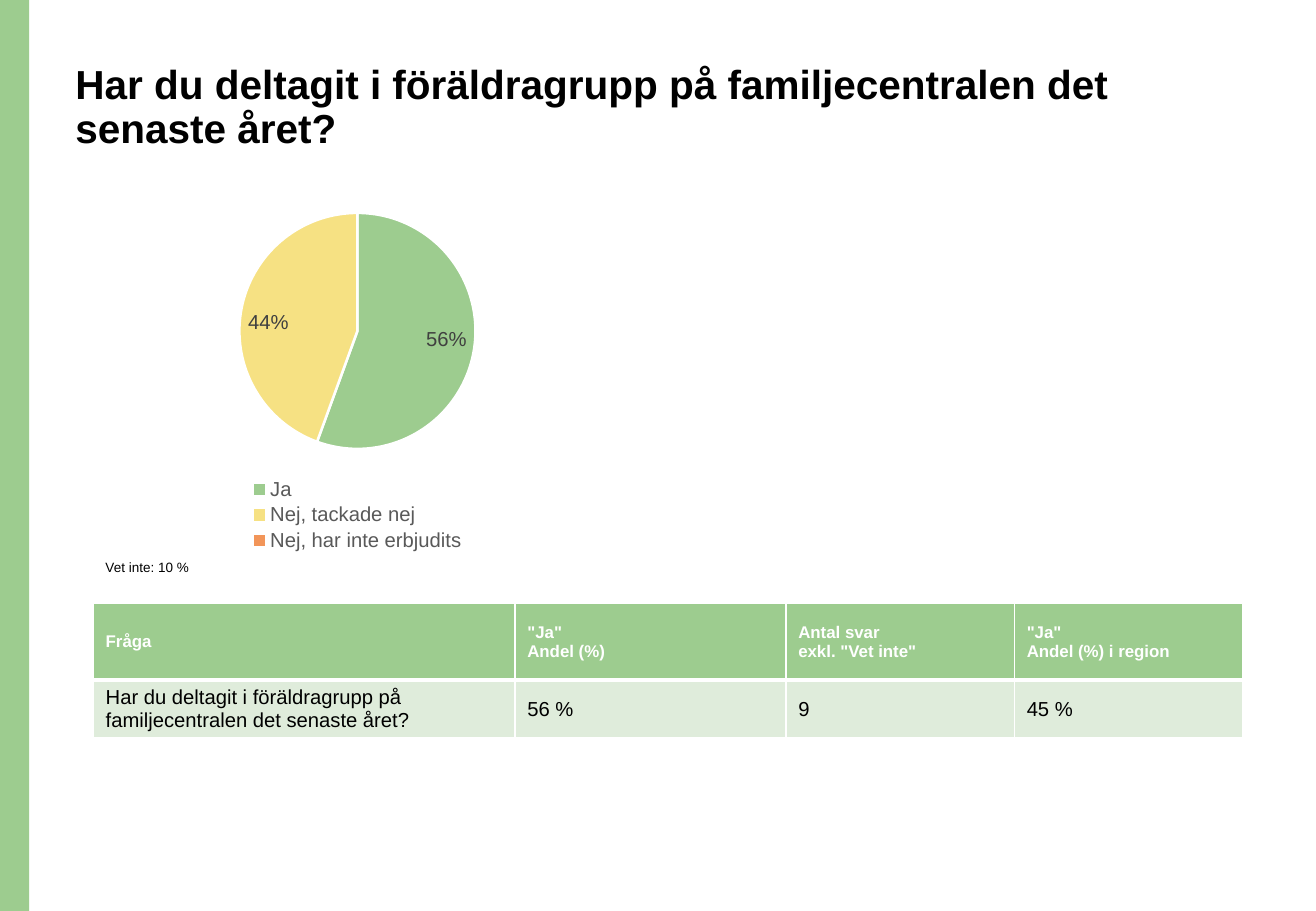
import pptx
import pptx.chart.data
import pptx.dml.color
import pptx.enum.chart
import pptx.enum.shapes
import pptx.enum.text
import pptx.oxml
import pptx.oxml.ns
import pptx.util
from dataclasses import dataclass
from pptx.util import Inches


@dataclass(frozen=True)
class Theme:
    font: str = "Arial"
    black: str = "000000"
    white: str = "FFFFFF"
    green: str = "9DCC8F"
    pale_green: str = "DFECDB"
    yellow: str = "F6E183"
    orange: str = "F29559"
    legend_grey: str = "595959"
    label_grey: str = "404040"
    title_size: int = 24
    body_size: int = 12
    header_size: int = 10
    note_size: int = 8


THEME = Theme()
QUESTION = "Har du deltagit i föräldragrupp på familjecentralen det senaste året?"
ANSWERS = {
    "Ja": (0.555556, THEME.green),
    "Nej, tackade nej": (0.444444, THEME.yellow),
    "Nej, har inte erbjudits": (0, THEME.orange),
}
TABLE_ROWS = [
    ["Fråga", '"Ja"\nAndel (%)', 'Antal svar\nexkl. "Vet inte"', '"Ja"\nAndel (%) i region'],
    [QUESTION, "56 %", "9", "45 %"],
]
COLUMN_WIDTHS = [3.47, 2.23, 1.88, 1.88]
ROW_HEIGHTS = [0.63, 0.47]


def rgb(color):
    return pptx.dml.color.RGBColor.from_string(color)


def format_font(font, size, color, bold=False):
    values = {"name": THEME.font, "size": pptx.util.Pt(size), "bold": bold}
    for name, value in values.items():
        setattr(font, name, value)
    font.color.rgb = rgb(color)


def fill_solid(target, color):
    target.fill.solid()
    target.fill.fore_color.rgb = rgb(color)


def write_text(frame, text, size, color, bold=False, spacing=None):
    frame.word_wrap = True
    frame.text = text
    for para in frame.paragraphs:
        if spacing:
            para.line_spacing = spacing
        for span in para.runs:
            format_font(span.font, size, color, bold)


def add_side_bar(page, box):
    bar = page.shapes.add_shape(pptx.enum.shapes.MSO_SHAPE.RECTANGLE, *map(Inches, box))
    bar.shadow.inherit = False
    fill_solid(bar, THEME.green)
    bar.line.fill.background()


def place_title(page, box):
    title = page.shapes.title
    for name, value in zip(("left", "top", "width", "height"), box):
        setattr(title, name, Inches(value))
    frame = title.text_frame
    write_text(frame, QUESTION, THEME.title_size, THEME.black, bold=True, spacing=0.9)
    frame.auto_size = pptx.enum.text.MSO_AUTO_SIZE.NONE
    frame.vertical_anchor = pptx.enum.text.MSO_ANCHOR.TOP
    frame.paragraphs[0].alignment = pptx.enum.text.PP_ALIGN.LEFT


def manual_layout(x, y, width, height, inner=False):
    """Build a chart layout from fractions of the chart area."""
    target = '<c:layoutTarget val="inner"/>' if inner else ""
    values = {"xMode": "edge", "yMode": "edge", "x": x, "y": y, "w": width, "h": height}
    parts = "".join(f'<c:{name} val="{value}"/>' for name, value in values.items())
    return pptx.oxml.parse_xml(
        f'<c:layout {pptx.oxml.ns.nsdecls("c")}>'
        f"<c:manualLayout>{target}{parts}</c:manualLayout></c:layout>"
    )


def add_answer_pie(page, box):
    data = pptx.chart.data.CategoryChartData()
    data.categories = list(ANSWERS)
    data.add_series("Series 1", [value for value, color in ANSWERS.values()])
    chart = page.shapes.add_chart(
        pptx.enum.chart.XL_CHART_TYPE.PIE, *map(Inches, box), data
    ).chart
    chart.has_title = False
    format_font(chart.font, THEME.header_size, THEME.black)

    # Slices
    plot = chart.plots[0]
    plot.vary_by_categories = True
    for index, (value, color) in enumerate(ANSWERS.values()):
        slice_format = plot.series[0].points[index].format
        fill_solid(slice_format, color)
        slice_format.line.color.rgb = rgb(THEME.white)
        slice_format.line.width = pptx.util.Pt(1.5)

    # Labels
    labels = plot.series[0].data_labels
    label_values = {
        "show_value": True,
        "show_percentage": False,
        "number_format": '[<0.01]"";[>0.01]0%',
        "number_format_is_linked": False,
        "position": pptx.enum.chart.XL_LABEL_POSITION.INSIDE_END,
    }
    for name, value in label_values.items():
        setattr(labels, name, value)
    format_font(labels.font, THEME.body_size, THEME.label_grey)

    # Legend
    chart.has_legend = True
    legend = chart.legend
    legend.position = pptx.enum.chart.XL_LEGEND_POSITION.BOTTOM
    legend.include_in_layout = False
    format_font(legend.font, THEME.body_size, THEME.legend_grey)

    # Places of the pie and the legend
    qn = pptx.oxml.ns.qn
    plot_area = chart.element.find(".//" + qn("c:plotArea"))
    legend_element = chart.element.find(".//" + qn("c:legend"))
    for parent in (plot_area, legend_element):
        for layout in parent.findall(qn("c:layout")):
            parent.remove(layout)
    plot_area.insert(0, manual_layout(0.22, 0.05, 0.57, 0.65, inner=True))
    legend_element.find(qn("c:legendPos")).addnext(manual_layout(0.24, 0.77, 0.53, 0.22))


def set_borders(cell, widths):
    properties = cell._tc.get_or_add_tcPr()
    for index, (side, points) in enumerate(widths.items()):
        line = pptx.oxml.parse_xml(
            f'<a:ln{side} {pptx.oxml.ns.nsdecls("a")} w="{pptx.util.Pt(points)}">'
            f'<a:solidFill><a:srgbClr val="{THEME.white}"/></a:solidFill></a:ln{side}>'
        )
        properties.insert(index, line)


def add_result_table(page, box):
    table = page.shapes.add_table(
        len(TABLE_ROWS), len(COLUMN_WIDTHS), *map(Inches, box)
    ).table
    table.horz_banding = False
    for column, width in zip(table.columns, COLUMN_WIDTHS):
        column.width = Inches(width)
    for row, height in zip(table.rows, ROW_HEIGHTS):
        row.height = Inches(height)
    styles = [
        (THEME.green, THEME.header_size, THEME.white, True, {"L": 1, "R": 1, "T": 1, "B": 3}),
        (THEME.pale_green, THEME.body_size, THEME.black, False, {"L": 1, "R": 1, "T": 3, "B": 1}),
    ]
    for row, texts, style in zip(table.rows, TABLE_ROWS, styles):
        fill, size, color, bold, borders = style
        for cell, text in zip(row.cells, texts):
            fill_solid(cell, fill)
            cell.vertical_anchor = pptx.enum.text.MSO_ANCHOR.MIDDLE
            write_text(cell.text_frame, text, size, color, bold)
            set_borders(cell, borders)


def add_note(page, box):
    note = page.shapes.add_textbox(*map(Inches, box))
    write_text(note.text_frame, "Vet inte: 10 %", THEME.note_size, THEME.black, spacing=1.5)


def main():
    deck = pptx.Presentation()
    deck.slide_width, deck.slide_height = Inches(10.83), Inches(7.5)
    page = deck.slides.add_slide(deck.slide_layouts.get_by_name("Title Only"))
    add_side_bar(page, (0, 0, 0.24, 7.5))
    place_title(page, (0.52, 0.48, 9.34, 1.02))
    add_answer_pie(page, (1.22, 1.6, 3.41, 3))
    add_result_table(page, (0.77, 4.97, sum(COLUMN_WIDTHS), sum(ROW_HEIGHTS)))
    add_note(page, (0.77, 4.49, 2.1, 0.48))
    deck.save("out.pptx")


if __name__ == "__main__":
    main()
